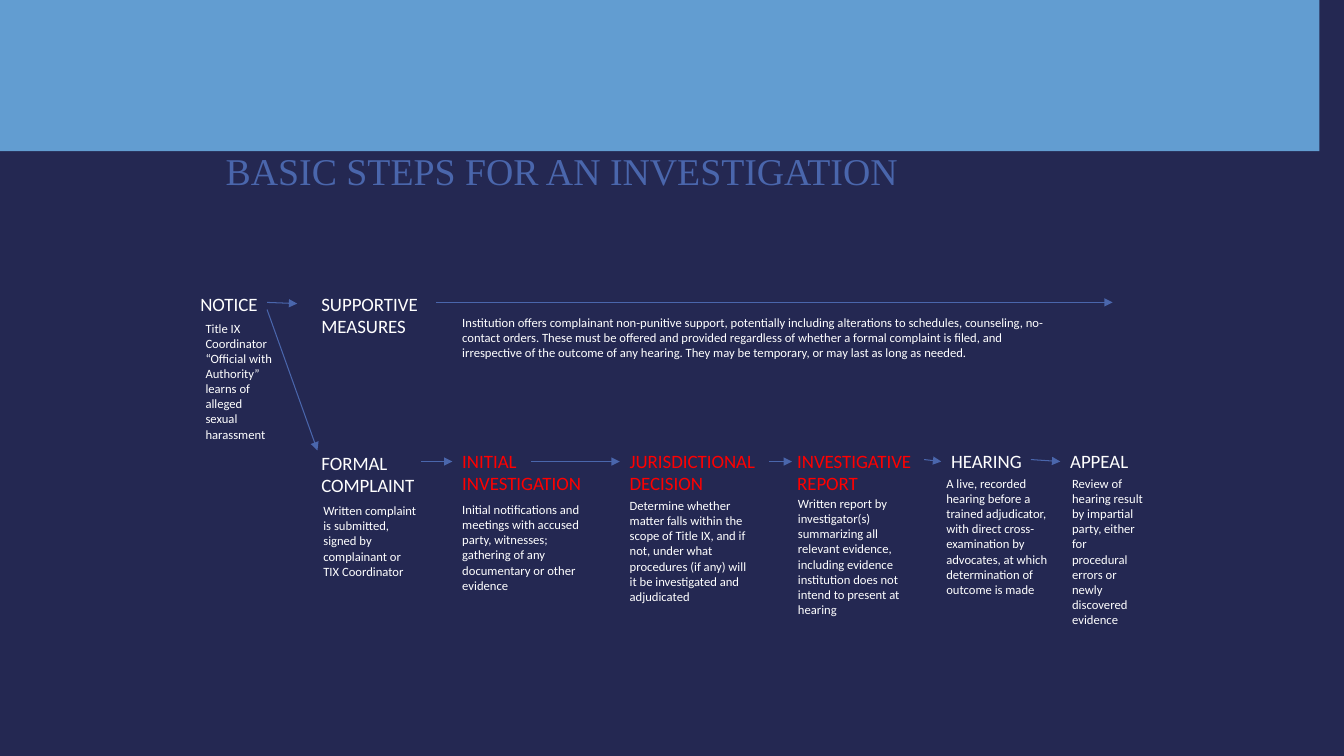
from lxml import etree
from pptx import Presentation
from pptx.dml.color import RGBColor
from pptx.enum.shapes import MSO_CONNECTOR as Connector, MSO_SHAPE as Shape
from pptx.enum.text import MSO_ANCHOR as Anchor, MSO_AUTO_SIZE as AutoSize
from pptx.oxml.ns import qn
from pptx.util import Cm, Pt

NAVY = RGBColor(0x24, 0x28, 0x52)
SKY = RGBColor(0x62, 0x9D, 0xD1)
BLUE = RGBColor(0x4A, 0x66, 0xAC)
WHITE = RGBColor(0xFF, 0xFF, 0xFF)
RED = RGBColor(0xFF, 0x00, 0x00)

# Heading, its colour and (left, top, width, height), then detail and its box, in cm
STEPS = [
    (["NOTICE"], WHITE, (4.8, 7.24, 2.67, 0.84),
     "Title IX Coordinator “Official with Authority” learns of alleged sexual "
     "harassment", (4.93, 7.95, 2.26, 3.33)),
    (["SUPPORTIVE MEASURES"], WHITE, (7.85, 7.24, 3.68, 1.42),
     "Institution offers complainant non-punitive support, potentially including "
     "alterations to schedules, counseling, no-contact orders. These must be offered "
     "and provided regardless of whether a formal complaint is filed, and irrespective "
     "of the outcome of any hearing. They may be temporary, or may last as long as "
     "needed.", (11.4, 7.8, 15.21, 1.42)),
    (["FORMAL COMPLAINT"], WHITE, (7.85, 11.25, 3.28, 1.42),
     "Written complaint is submitted, signed by complainant or TIX Coordinator",
     (7.9, 12.55, 2.87, 2.57)),
    (["INITIAL INVESTIGATION"], RED, (11.4, 11.2, 4.47, 1.42),
     "Initial notifications and meetings with accused party, witnesses; gathering of "
     "any documentary or other evidence", (11.4, 12.52, 3.66, 2.57)),
    (["JURISDICTIONAL", "DECISION"], RED, (15.62, 11.2, 4.7, 1.42),
     "Determine whether matter falls within the scope of Title IX, and if not, under "
     "what procedures (if any) will it be investigated and adjudicated",
     (15.62, 12.42, 3.53, 2.95)),
    (["INVESTIGATIVE REPORT"], RED, (19.84, 11.2, 4.01, 1.42),
     "Written report by investigator(s) summarizing all relevant evidence, including "
     "evidence institution does not intend to present at hearing",
     (19.86, 12.37, 3.43, 3.33)),
    (["HEARING"], WHITE, (23.72, 11.2, 2.67, 0.84),
     "A live, recorded hearing before a trained adjudicator, with direct "
     "cross-examination by advocates, at which determination of outcome is made",
     (23.6, 11.86, 3.1, 3.33)),
    (["APPEAL"], WHITE, (26.72, 11.2, 2.67, 0.84),
     "Review of hearing result by impartial party, either for procedural errors or "
     "newly discovered evidence", (26.77, 11.86, 2.31, 4.11)),
]

# Start x, start y, end x, end y in cm
ARROWS = [
    (6.73, 7.62, 7.49, 7.65),
    (6.73, 7.8, 8.0, 11.35),
    (11.0, 7.62, 28.04, 7.62),
    (10.62, 11.63, 11.4, 11.63),
    (13.39, 11.63, 15.62, 11.63),
    (19.38, 11.63, 19.96, 11.63),
    (23.29, 11.58, 23.72, 11.63),
    (25.98, 11.58, 26.72, 11.63),
]


def add_banner(slide):
    banner = slide.shapes.add_shape(Shape.RECTANGLE, 0, 0, Cm(33.25), Cm(3.81))
    banner.shadow.inherit = False
    banner.fill.solid()
    banner.fill.fore_color.rgb = SKY
    banner.line.fill.background()


def add_text(slide, box, lines, size, color, font="Calibri"):
    """Add a wrapping text box with one paragraph per line and return its frame."""
    frame = slide.shapes.add_textbox(*map(Cm, box)).text_frame
    frame.word_wrap = True
    for index, line in enumerate(lines):
        paragraph = frame.add_paragraph() if index else frame.paragraphs[0]
        run = paragraph.add_run()
        run.text = line
        run.font.name = font
        run.font.size = Pt(size)
        run.font.color.rgb = color
    return frame


def add_title(slide):
    frame = add_text(slide, (5.44, 3.58, 22.25, 1.6),
                     ["BASIC STEPS FOR AN INVESTIGATION"], 27, BLUE, "Times New Roman")
    frame.vertical_anchor = Anchor.MIDDLE
    frame.paragraphs[0].line_spacing = 0.85


def add_step(slide, heading, color, heading_box, detail, detail_box):
    for frame in (add_text(slide, heading_box, heading, 13.5, color),
                  add_text(slide, detail_box, [detail], 9, WHITE)):
        frame.auto_size = AutoSize.SHAPE_TO_FIT_TEXT


def add_arrow(slide, ends):
    arrow = slide.shapes.add_connector(Connector.STRAIGHT, *map(Cm, ends))
    arrow.line.color.rgb = BLUE
    arrow.line.width = Pt(0.75)
    etree.SubElement(arrow.line._get_or_add_ln(), qn("a:tailEnd"), type="triangle")
    etree.SubElement(arrow._element.spPr, qn("a:effectLst"))


def main():
    deck = Presentation()
    deck.slide_width, deck.slide_height = Cm(33.87), Cm(19.05)
    slide = deck.slides.add_slide(deck.slide_layouts[6])
    slide.background.fill.solid()
    slide.background.fill.fore_color.rgb = NAVY
    add_banner(slide)
    add_title(slide)
    for step in STEPS:
        add_step(slide, *step)
    for ends in ARROWS:
        add_arrow(slide, ends)
    deck.save("out.pptx")


if __name__ == "__main__":
    main()
